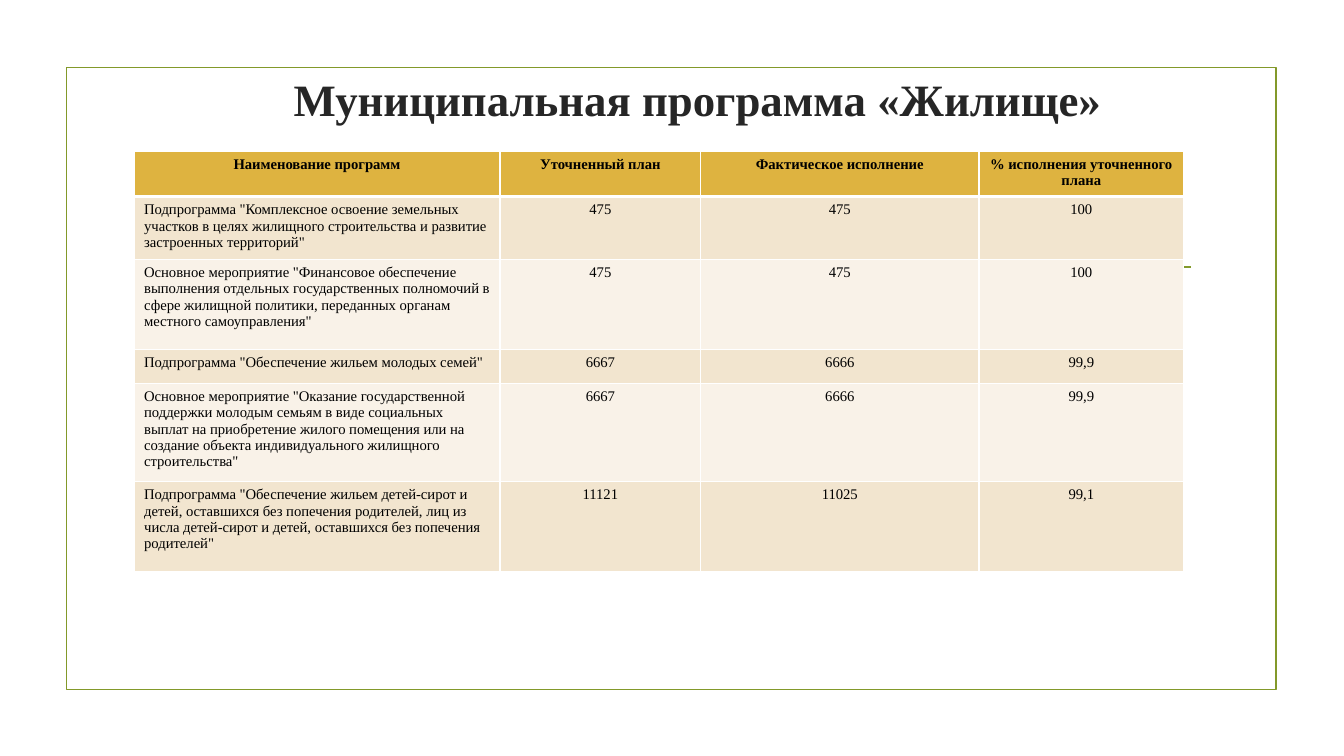
from dataclasses import dataclass

from lxml import etree
from pptx import Presentation
from pptx import util as u
from pptx.dml.color import RGBColor
from pptx.enum import shapes, text
from pptx.oxml import ns

COLORS = {
    "green": "83992A",
    "title": "262626",
    "text": "000000",
    "header": "DEB340",
    "band_dark": "F2E5CF",
    "band_light": "F9F2E8",
    "border": "FFFFFF",
}
FONT = "Times New Roman"
COLUMN_WIDTHS = (3.63, 1.99, 2.76, 2.03)
HEADER_HEIGHT = 0.37
HEADINGS = (
    "Наименование программ",
    "Уточненный план",
    "Фактическое исполнение",
    "% исполнения уточненного плана",
)


@dataclass(frozen=True)
class Programme:
    name: str
    plan: str
    actual: str
    percent: str
    height: float


PROGRAMMES = (
    Programme(
        'Подпрограмма "Комплексное освоение земельных участков в целях '
        'жилищного строительства и развитие застроенных территорий"',
        "475", "475", "100", 0.51),
    Programme(
        'Основное мероприятие "Финансовое обеспечение выполнения отдельных '
        'государственных полномочий в сфере жилищной политики, переданных '
        'органам местного самоуправления"',
        "475", "475", "100", 0.89),
    Programme(
        'Подпрограмма "Обеспечение жильем молодых семей"',
        "6667", "6666", "99,9", 0.34),
    Programme(
        'Основное мероприятие "Оказание государственной поддержки молодым '
        'семьям в виде социальных выплат на приобретение жилого помещения или '
        'на создание объекта индивидуального жилищного строительства"',
        "6667", "6666", "99,9", 0.78),
    Programme(
        'Подпрограмма "Обеспечение жильем детей-сирот и детей, оставшихся без '
        'попечения родителей, лиц из числа детей-сирот и детей, оставшихся '
        'без попечения родителей"',
        "11121", "11025", "99,1", 0.89),
)


def rgb(name: str) -> RGBColor:
    return RGBColor.from_string(COLORS[name])


def style_font(font, size: float, color: str, bold: bool) -> None:
    font.name = FONT
    font.size = u.Pt(size)
    font.bold = bold
    font.color.rgb = rgb(color)


def style_line(line) -> None:
    line.color.rgb = rgb("green")
    line.width = u.Pt(1.25)


def add_frame(slide) -> None:
    frame = slide.shapes.add_shape(
        shapes.MSO_SHAPE.RECTANGLE,
        u.Inches(0.66), u.Inches(0.67), u.Inches(12), u.Inches(6.17))
    frame.shadow.inherit = False
    frame.fill.background()
    style_line(frame.line)

    rule = slide.shapes.add_connector(
        shapes.MSO_CONNECTOR.STRAIGHT,
        u.Inches(1.53), u.Inches(2.65), u.Inches(11.81), u.Inches(2.65))
    style_line(rule.line)
    etree.SubElement(rule._element.spPr, ns.qn("a:effectLst"))


def add_title(slide) -> None:
    title = slide.shapes.add_textbox(
        u.Inches(0.7), u.Inches(0.7), u.Inches(11.98), u.Inches(0.55))
    body = title.text_frame
    body.word_wrap = True
    body.vertical_anchor = text.MSO_ANCHOR.MIDDLE
    body.margin_left = body.margin_right = 0
    body.margin_top = body.margin_bottom = 0
    heading = body.paragraphs[0]
    heading.text = "Муниципальная программа «Жилище»"
    heading.alignment = text.PP_ALIGN.CENTER
    heading.line_spacing = 1.02
    properties = heading._p.get_or_add_pPr()
    properties.set("marL", str(u.Inches(0.01)))
    properties.set("indent", str(u.Inches(0.45)))
    style_font(heading.runs[0].font, 32, "title", True)


def add_borders(cell, bottom_width: float) -> None:
    properties = cell._tc.get_or_add_tcPr()
    widths = {"lnL": 1, "lnR": 1, "lnT": 1, "lnB": bottom_width}
    for position, (side, width) in enumerate(widths.items()):
        border = etree.Element(ns.qn(f"a:{side}"), w=str(u.Pt(width)))
        fill = etree.SubElement(border, ns.qn("a:solidFill"))
        etree.SubElement(fill, ns.qn("a:srgbClr"), val=COLORS["border"])
        properties.insert(position, border)


def fill_cell(cell, wording: str, fill: str, centered: bool, header: bool) -> None:
    cell.fill.solid()
    cell.fill.fore_color.rgb = rgb(fill)
    add_borders(cell, 3 if header else 1)
    paragraph = cell.text_frame.paragraphs[0]
    paragraph.text = wording
    paragraph.alignment = text.PP_ALIGN.CENTER if centered else text.PP_ALIGN.LEFT
    style_font(paragraph.runs[0].font, 10.5, "text", header)


def add_programme_table(slide) -> None:
    heights = [HEADER_HEIGHT] + [item.height for item in PROGRAMMES]
    table = slide.shapes.add_table(
        len(heights), len(HEADINGS), u.Inches(1.33), u.Inches(1.5),
        u.Inches(sum(COLUMN_WIDTHS)), u.Inches(sum(heights))).table
    for column, width in zip(table.columns, COLUMN_WIDTHS):
        column.width = u.Inches(width)
    for row, height in zip(table.rows, heights):
        row.height = u.Inches(height)

    entries = [HEADINGS] + [
        (item.name, item.plan, item.actual, item.percent) for item in PROGRAMMES]
    for row_index, entry in enumerate(entries):
        header = row_index == 0
        band = "band_dark" if row_index % 2 else "band_light"
        for column_index, wording in enumerate(entry):
            fill_cell(table.cell(row_index, column_index), wording,
                      "header" if header else band,
                      header or column_index > 0, header)


def main() -> None:
    deck = Presentation()
    deck.slide_width = u.Inches(13.33)
    deck.slide_height = u.Inches(7.5)
    slide = deck.slides.add_slide(deck.slide_layouts[6])
    add_frame(slide)
    add_title(slide)
    add_programme_table(slide)
    deck.save("out.pptx")


if __name__ == "__main__":
    main()
